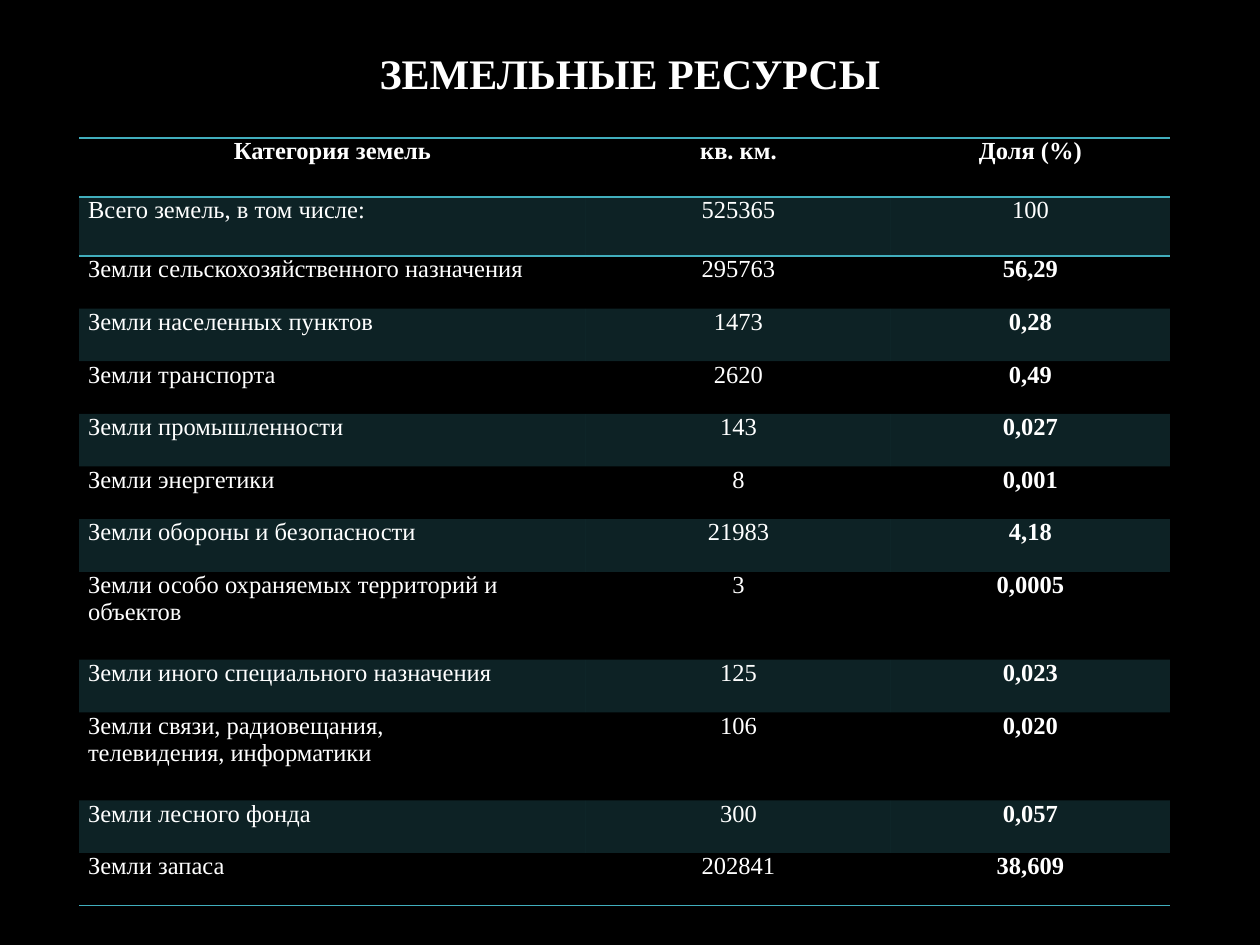
import pptx
import pptx.util
import pptx.dml.color
import pptx.enum.text
import pptx.oxml
import pptx.oxml.ns

BLACK = pptx.dml.color.RGBColor(0x00, 0x00, 0x00)
WHITE = pptx.dml.color.RGBColor(0xFF, 0xFF, 0xFF)
TEAL = pptx.dml.color.RGBColor(0x41, 0xAE, 0xBD)
FONT = "Times New Roman"
CENTER = pptx.enum.text.PP_ALIGN.CENTER
LEFT = pptx.enum.text.PP_ALIGN.LEFT
NO_STYLE = "{2D5ABB26-0587-4C30-8999-92F81FD0307C}"

TITLE = "ЗЕМЕЛЬНЫЕ РЕСУРСЫ"
ROWS = [
    ("Категория земель", "кв. км.", "Доля (%)"),
    ("Всего земель, в том числе:", "525365", "100"),
    ("Земли сельскохозяйственного назначения", "295763", "56,29"),
    ("Земли населенных пунктов", "1473", "0,28"),
    ("Земли транспорта", "2620", "0,49"),
    ("Земли промышленности", "143", "0,027"),
    ("Земли энергетики", "8", "0,001"),
    ("Земли обороны и безопасности", "21983", "4,18"),
    ("Земли особо охраняемых территорий и объектов", "3", "0,0005"),
    ("Земли иного специального назначения", "125", "0,023"),
    ("Земли связи, радиовещания,\nтелевидения, информатики", "106", "0,020"),
    ("Земли лесного фонда", "300", "0,057"),
    ("Земли запаса", "202841", "38,609"),
]
COL_WIDTHS = (507, 305, 279)
TABLE_LEFT, TABLE_TOP, TABLE_HEIGHT = 79, 138, 768
SPECIAL_HEIGHTS = {0: 59, 1: 59, 8: 88, 10: 88}  # the other rows share the rest
LAST = len(ROWS) - 1


def px(n):
    return pptx.util.Emu(round(n * 914400 / 126))


def write(tf, text, size, bold, align):
    for i, line in enumerate(text.split("\n")):
        p = tf.add_paragraph() if i else tf.paragraphs[0]
        p.alignment = align
        r = p.add_run()
        r.text = line
        r.font.name = FONT
        r.font.size = pptx.util.Pt(size)
        r.font.bold = bold
        r.font.color.rgb = WHITE


def add_border(tc_pr, tag, index):
    tc_pr.insert(index, pptx.oxml.parse_xml(
        f'<a:{tag} {pptx.oxml.ns.nsdecls("a")} w="12700"><a:solidFill>'
        f'<a:srgbClr val="{TEAL}"/></a:solidFill></a:{tag}>'))


def style_cell(cell, row):
    """Tint odd rows and rule the header and the foot of the table."""
    cell.margin_left = cell.margin_right = px(9)
    cell.margin_top = cell.margin_bottom = 0
    tc_pr = cell._tc.get_or_add_tcPr()
    if row % 2:
        cell.fill.solid()
        cell.fill.fore_color.rgb = TEAL
        color = tc_pr.find(".//" + pptx.oxml.ns.qn("a:srgbClr"))
        color.append(pptx.oxml.parse_xml(
            f'<a:alpha {pptx.oxml.ns.nsdecls("a")} val="20000"/>'))
    else:
        cell.fill.background()
    if row in (0, LAST):
        add_border(tc_pr, "lnB", 0)
    if row in (0, 1):
        add_border(tc_pr, "lnT", 0)


prs = pptx.Presentation()
prs.slide_width, prs.slide_height = px(1260), px(945)
slide = prs.slides.add_slide(prs.slide_layouts[6])
slide.background.fill.solid()
slide.background.fill.fore_color.rgb = BLACK

title = slide.shapes.add_textbox(0, px(39), px(1260), px(73))
tf = title.text_frame
tf.word_wrap = True
tf.vertical_anchor = pptx.enum.text.MSO_ANCHOR.MIDDLE
write(tf, TITLE, 24, True, CENTER)
tf.paragraphs[0].line_spacing = 0.9

frame = slide.shapes.add_table(
    len(ROWS), len(COL_WIDTHS), px(TABLE_LEFT), px(TABLE_TOP),
    px(sum(COL_WIDTHS)), px(TABLE_HEIGHT))
table = frame.table
table._tbl.tblPr.find(pptx.oxml.ns.qn("a:tableStyleId")).text = NO_STYLE
for column, width in zip(table.columns, COL_WIDTHS):
    column.width = px(width)

plain_height = ((TABLE_HEIGHT - sum(SPECIAL_HEIGHTS.values()))
                / (len(ROWS) - len(SPECIAL_HEIGHTS)))
for i, values in enumerate(ROWS):
    table.rows[i].height = px(SPECIAL_HEIGHTS.get(i, plain_height))
    for j, value in enumerate(values):
        cell = table.cell(i, j)
        bold = i == 0 or (j == 2 and i > 1)
        align = LEFT if j == 0 and i > 0 else CENTER
        write(cell.text_frame, value, 14, bold, align)
        style_cell(cell, i)

prs.save("out.pptx")
